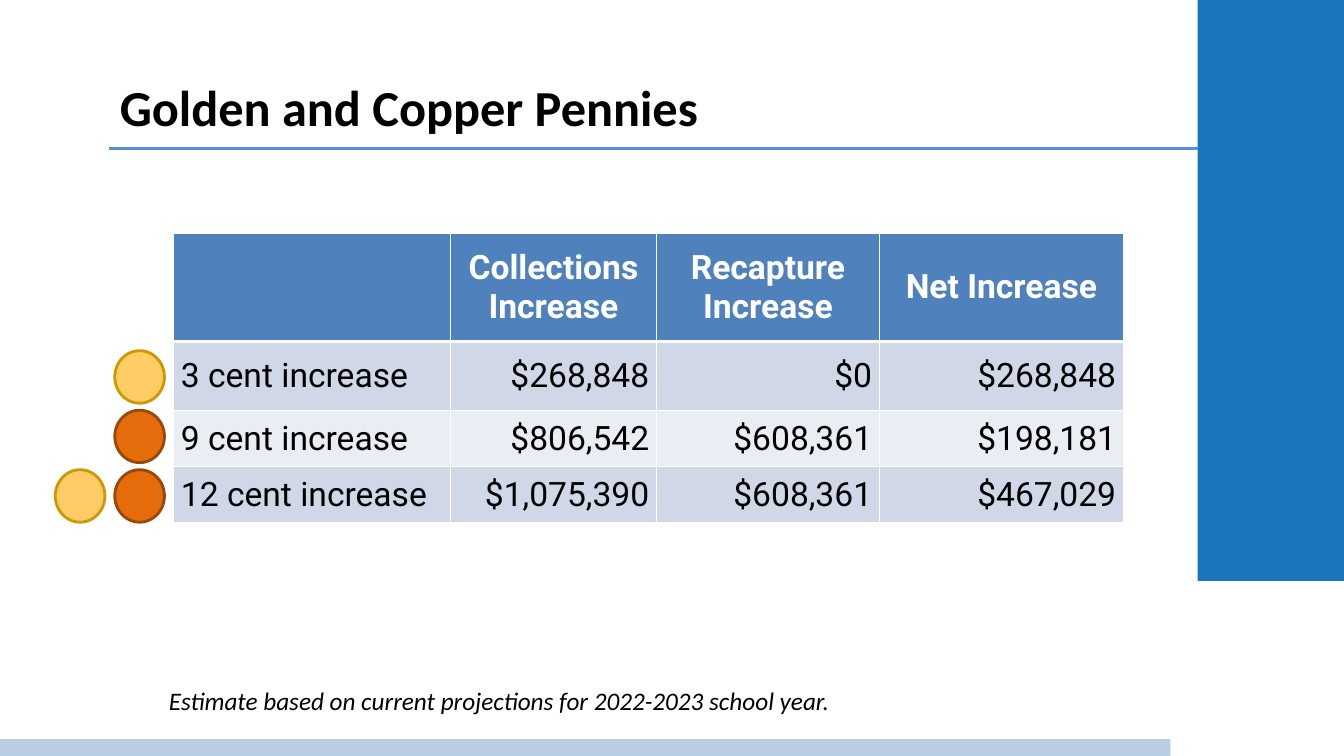
from dataclasses import dataclass

from lxml.etree import SubElement
from pptx import Presentation
from pptx.dml.color import RGBColor
from pptx.enum.shapes import MSO_CONNECTOR, MSO_SHAPE
from pptx.enum.text import MSO_ANCHOR, PP_ALIGN
from pptx.oxml.ns import qn
from pptx.slide import Slide
from pptx.table import _Cell
from pptx.text.text import TextFrame
from pptx.util import Pt


@dataclass(frozen=True)
class Theme:
    heading_font: str = "Calibri"
    table_font: str = "Roboto"
    title_size: float = 36
    table_size: float = 24
    note_size: float = 18
    text: str = "000000"
    white: str = "FFFFFF"
    side_bar: str = "1B75BC"
    bottom_bar: str = "B9CDE5"
    rule: str = "558ED5"
    header: str = "4F81BD"
    bands: tuple[str, str] = ("D0D8E8", "E9EDF4")
    gold: tuple[str, str] = ("FFCC66", "CC9900")
    copper: tuple[str, str] = ("E46C0A", "984807")


@dataclass(frozen=True)
class Box:
    left: float
    top: float
    width: float
    height: float

    def lengths(self) -> tuple[Pt, Pt, Pt, Pt]:
        return Pt(self.left), Pt(self.top), Pt(self.width), Pt(self.height)


@dataclass(frozen=True)
class Coin:
    """A penny marker; column 0 is next to the table, row 0 is its first body row."""
    column: int
    row: int
    colors: tuple[str, str]


@dataclass(frozen=True)
class Style:
    font: str
    size: float
    color: str
    bold: bool = False
    italic: bool = False
    align: PP_ALIGN = PP_ALIGN.LEFT


THEME = Theme()
COINS = [
    Coin(0, 0, THEME.gold),
    Coin(0, 1, THEME.copper),
    Coin(0, 2, THEME.copper),
    Coin(1, 2, THEME.gold),
]
COIN_BOX = Box(82, 250.5, 35.5, 37.5)
COIN_PITCH = 42.5

TABLE_BOX = Box(124, 166.5, 678.5, 207)
COLUMN_WIDTHS = [197.75, 147.25, 159.25, 174.25]
ROW_HEIGHTS = [77.5, 49.5, 40, 40]
ROWS = [
    ["", "Collections Increase", "Recapture Increase", "Net Increase"],
    ["3 cent increase", "$268,848", "$0", "$268,848"],
    ["9 cent increase", "$806,542", "$608,361", "$198,181"],
    ["12 cent increase", "$1,075,390", "$608,361", "$467,029"],
]


def rgb(color: str) -> RGBColor:
    return RGBColor.from_string(color)


def add_text(tf: TextFrame, text: str, style: Style) -> None:
    p = tf.paragraphs[0]
    p.alignment = style.align
    r = p.add_run()
    r.text = text
    r.font.name = style.font
    r.font.size = Pt(style.size)
    r.font.bold = style.bold
    r.font.italic = style.italic
    r.font.color.rgb = rgb(style.color)


def add_text_box(s: Slide, box: Box, text: str, style: Style, anchor: MSO_ANCHOR) -> None:
    tf = s.shapes.add_textbox(*box.lengths()).text_frame
    tf.word_wrap = True
    tf.vertical_anchor = anchor
    add_text(tf, text, style)


def add_filled(s: Slide, kind: MSO_SHAPE, box: Box, fill: str, line: str | None = None) -> None:
    sp = s.shapes.add_shape(kind, *box.lengths())
    sp.shadow.inherit = False
    sp.fill.solid()
    sp.fill.fore_color.rgb = rgb(fill)
    if line:
        sp.line.color.rgb = rgb(line)
        sp.line.width = Pt(2)
    else:
        sp.line.fill.background()


def add_rule(s: Slide, left: float, right: float, top: float) -> None:
    line = s.shapes.add_connector(MSO_CONNECTOR.STRAIGHT, Pt(left), Pt(top), Pt(right), Pt(top))
    line.line.color.rgb = rgb(THEME.rule)
    line.line.width = Pt(2.25)
    SubElement(line._element.spPr, qn("a:effectLst"))


def add_coin(s: Slide, coin: Coin) -> None:
    box = Box(COIN_BOX.left - coin.column * COIN_PITCH, COIN_BOX.top + coin.row * COIN_PITCH,
              COIN_BOX.width, COIN_BOX.height)
    add_filled(s, MSO_SHAPE.FLOWCHART_CONNECTOR, box, *coin.colors)


def set_borders(cell: _Cell, top: float, bottom: float) -> None:
    """Draw white borders; call before the fill, which must follow them in the XML."""
    tc_pr = cell._tc.get_or_add_tcPr()
    for side, width in {"L": 1, "R": 1, "T": top, "B": bottom}.items():
        ln = SubElement(tc_pr, qn(f"a:ln{side}"), w=str(Pt(width)))
        solid = SubElement(ln, qn("a:solidFill"))
        SubElement(solid, qn("a:srgbClr"), val=THEME.white)


def cell_style(row: int, column: int) -> Style:
    if row == 0:
        return Style(THEME.table_font, THEME.table_size, THEME.white, bold=True, align=PP_ALIGN.CENTER)
    align = PP_ALIGN.RIGHT if column else PP_ALIGN.LEFT
    return Style(THEME.table_font, THEME.table_size, THEME.text, align=align)


def add_increase_table(s: Slide) -> None:
    table = s.shapes.add_table(len(ROWS), len(COLUMN_WIDTHS), *TABLE_BOX.lengths()).table
    for column, width in zip(table.columns, COLUMN_WIDTHS):
        column.width = Pt(width)
    for i, (values, height) in enumerate(zip(ROWS, ROW_HEIGHTS)):
        table.rows[i].height = Pt(height)
        for j, value in enumerate(values):
            cell = table.cell(i, j)
            set_borders(cell, top=3 if i == 1 else 1, bottom=3 if i == 0 else 1)
            cell.fill.solid()
            cell.fill.fore_color.rgb = rgb(THEME.bands[(i - 1) % 2] if i else THEME.header)
            cell.vertical_anchor = MSO_ANCHOR.MIDDLE
            cell.margin_left = cell.margin_right = Pt(5.25)
            cell.margin_top = cell.margin_bottom = Pt(0)
            if value:
                add_text(cell.text_frame, value, cell_style(i, j))


def main() -> None:
    prs = Presentation()
    prs.slide_width, prs.slide_height = Pt(960), Pt(540)
    s = prs.slides.add_slide(prs.slide_layouts[6])

    add_filled(s, MSO_SHAPE.RECTANGLE, Box(855.5, 0, 104.5, 415), THEME.side_bar)
    add_filled(s, MSO_SHAPE.RECTANGLE, Box(0, 528, 836, 14), THEME.bottom_bar)
    add_rule(s, 78, 856, 106)
    add_text_box(s, Box(78.5, 46, 738, 60), "Golden and Copper Pennies",
                 Style(THEME.heading_font, THEME.title_size, THEME.text, bold=True), MSO_ANCHOR.MIDDLE)
    add_increase_table(s)
    for coin in COINS:
        add_coin(s, coin)
    add_text_box(s, Box(113.5, 486, 667.5, 29),
                 "Estimate based on current projections for 2022-2023 school year.",
                 Style(THEME.heading_font, THEME.note_size, THEME.text, italic=True), MSO_ANCHOR.TOP)
    prs.save("out.pptx")


if __name__ == "__main__":
    main()
